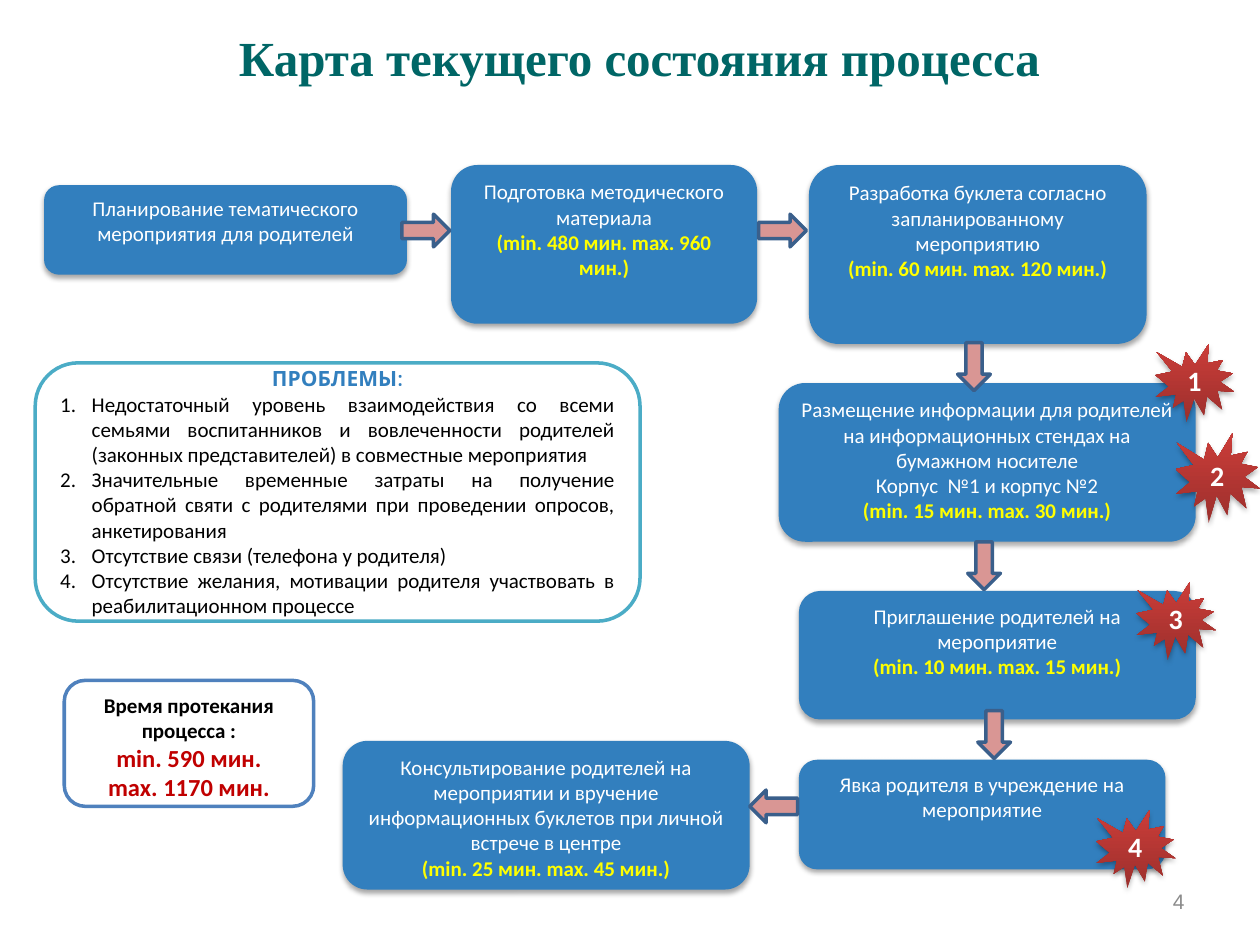
from lxml.etree import SubElement
from pptx import Presentation
from pptx.dml.color import RGBColor
from pptx.enum.shapes import MSO_SHAPE
from pptx.enum.text import MSO_ANCHOR, PP_ALIGN
from pptx.oxml.ns import qn
from pptx.util import Inches, Pt

TEAL = RGBColor(0x00, 0x66, 0x66)
BLUE = RGBColor(0x32, 0x7F, 0xBE)
FRAME_BLUE = RGBColor(0x4F, 0x81, 0xBD)
FRAME_AQUA = RGBColor(0x4B, 0xAC, 0xC6)
ARROW_PINK = RGBColor(0xD9, 0x96, 0x94)
ARROW_EDGE = RGBColor(0x3A, 0x5F, 0x8B)
STAR_DARK = RGBColor(0x9C, 0x2F, 0x2C)
STAR_LIGHT = RGBColor(0xCB, 0x3D, 0x39)
YELLOW = RGBColor(0xFF, 0xFF, 0x00)
RED = RGBColor(0xC0, 0x00, 0x00)
GRAY = RGBColor(0x8B, 0x8B, 0x8B)
WHITE = RGBColor(0xFF, 0xFF, 0xFF)
BLACK = RGBColor(0x00, 0x00, 0x00)

# (left, top, width, height), description lines, duration
STEPS = [
    ((0.35, 1.47, 2.88, 0.71), ["Планирование тематического мероприятия для родителей"], None),
    ((3.58, 1.31, 2.43, 1.26), ["Подготовка методического материала"],
     "(min. 480 мин. max. 960 мин.)"),
    ((6.42, 1.31, 2.68, 1.42), ["Разработка буклета согласно запланированному мероприятию"],
     "(min. 60 мин. max. 120 мин.)"),
    ((6.18, 3.04, 3.31, 1.26),
     ["Размещение информации для родителей на информационных стендах на бумажном носителе",
      "Корпус  №1 и корпус №2"],
     "(min. 15 мин. max. 30 мин.)"),
    ((6.34, 4.69, 3.15, 1.02), ["Приглашение родителей на мероприятие"],
     "(min. 10 мин. max. 15 мин.)"),
    ((6.34, 6.03, 2.91, 0.87), ["Явка родителя в учреждение на мероприятие"], None),
    ((2.72, 5.88, 3.23, 1.18),
     ["Консультирование родителей на мероприятии и вручение информационных буклетов "
      "при личной встрече в центре"],
     "(min. 25 мин. max. 45 мин.)"),
]

# left, top, rotation
ARROWS = [(3.19, 1.7, 0), (6.02, 1.7, 0), (7.54, 2.78, 90),
          (7.62, 4.36, 90), (7.7, 5.7, 90), (5.95, 6.27, 180)]

PROBLEM_MARKS = [(9.17, 2.73, 0.63, 0.62), (9.33, 3.44, 0.67, 0.71),
                 (9.02, 4.62, 0.63, 0.62), (8.7, 6.43, 0.63, 0.62)]

PROBLEMS = [
    "Недостаточный уровень взаимодействия со всеми семьями воспитанников и вовлеченности "
    "родителей (законных представителей) в совместные мероприятия",
    "Значительные временные затраты на получение обратной святи с родителями при проведении "
    "опросов, анкетирования",
    "Отсутствие связи (телефона у родителя)",
    "Отсутствие желания, мотивации родителя участвовать в реабилитационном процессе",
]


class ProcessMap:
    font = "Calibri"
    size = 12

    def __init__(self, slide):
        self.slide = slide

    def style(self, paragraph, color, size=None, bold=False, font=None, align=PP_ALIGN.CENTER):
        paragraph.alignment = align
        for run in paragraph.runs:
            run.font.name = font or self.font
            run.font.size = Pt(size or self.size)
            run.font.bold = bold
            run.font.color.rgb = color

    def shape(self, preset, area, fill=None, line=None):
        shape = self.slide.shapes.add_shape(preset, *map(Inches, area))
        shape.shadow.inherit = False
        if fill is not None:
            shape.fill.solid()
            shape.fill.fore_color.rgb = fill
        if line is None:
            shape.line.fill.background()
        else:
            shape.line.color.rgb = line
            shape.line.width = Pt(2)
        return shape

    def drop_shadow(self, shape):
        effects = shape._element.spPr.find(qn("a:effectLst"))
        shadow = SubElement(effects, qn("a:outerShdw"), blurRad=str(Pt(3.1)),
                            dist=str(Pt(1.8)), dir="5400000", rotWithShape="0")
        color = SubElement(shadow, qn("a:srgbClr"), val="000000")
        SubElement(color, qn("a:alpha"), val="35000")

    def panel(self, area, lines, fill, line=None, anchor=MSO_ANCHOR.TOP):
        panel = self.shape(MSO_SHAPE.ROUNDED_RECTANGLE, area, fill, line)
        panel.text_frame.vertical_anchor = anchor
        panel.text_frame.text = "\n".join(lines)
        return panel

    def title(self, text, area):
        title = self.slide.shapes.title
        title.left, title.top, title.width, title.height = map(Inches, area)
        title.text_frame.text = text
        self.style(title.text_frame.paragraphs[0], TEAL, 28, True, "Times New Roman")

    def step(self, area, description, duration):
        box = self.panel(area, description + ([duration] if duration else []), BLUE)
        self.drop_shadow(box)
        for paragraph in box.text_frame.paragraphs:
            is_duration = paragraph.text == duration
            self.style(paragraph, YELLOW if is_duration else WHITE, bold=is_duration)

    def arrow(self, left, top, rotation):
        arrow = self.shape(MSO_SHAPE.RIGHT_ARROW, (left, top, 0.38, 0.26), ARROW_PINK, ARROW_EDGE)
        arrow.rotation = rotation

    def problem_mark(self, number, area):
        star = self.shape(MSO_SHAPE.EXPLOSION1, area)
        star.fill.gradient()
        star.fill.gradient_angle = 90
        for stop, color, position in zip(star.fill.gradient_stops, (STAR_DARK, STAR_LIGHT), (0, 1)):
            stop.color.rgb = color
            stop.position = position
        self.drop_shadow(star)
        star.text_frame.vertical_anchor = MSO_ANCHOR.MIDDLE
        star.text_frame.text = str(number)
        self.style(star.text_frame.paragraphs[0], WHITE, 16, True)

    def problem_list(self, area, heading, problems):
        panel = self.panel(area, [heading, *problems], WHITE, FRAME_AQUA, MSO_ANCHOR.MIDDLE)
        first, *items = panel.text_frame.paragraphs
        self.style(first, BLUE, bold=True, font="Quicksand")
        for item in items:
            properties = item._p.get_or_add_pPr()
            properties.set("marL", str(Inches(0.25)))
            properties.set("indent", str(-Inches(0.25)))
            bullet_color = SubElement(properties, qn("a:buClr"))
            SubElement(bullet_color, qn("a:srgbClr"), val=str(BLACK))
            SubElement(properties, qn("a:buAutoNum"), type="arabicPeriod")
            self.style(item, BLACK, align=PP_ALIGN.JUSTIFY)

    def total_time(self, area, heading, durations):
        panel = self.panel(area, [heading, *durations], WHITE, FRAME_BLUE)
        first, *rest = panel.text_frame.paragraphs
        self.style(first, BLACK, bold=True)
        for paragraph in rest:
            self.style(paragraph, RED, 14, True)

    def page_number(self, number, area):
        frame = self.slide.shapes.add_textbox(*map(Inches, area)).text_frame
        frame.word_wrap = True
        frame.vertical_anchor = MSO_ANCHOR.MIDDLE
        frame.text = str(number)
        self.style(frame.paragraphs[0], GRAY, font="Arial", align=PP_ALIGN.RIGHT)


def main():
    presentation = Presentation()
    presentation.slide_width, presentation.slide_height = Inches(10), Inches(7.5)
    title_only = presentation.slide_layouts[5]
    process = ProcessMap(presentation.slides.add_slide(title_only))

    process.title("Карта текущего состояния процесса", (1.61, 0.17, 6.93, 0.56))
    for step in STEPS:
        process.step(*step)
    process.total_time((0.51, 5.4, 1.98, 1), "Время протекания процесса :",
                       ["min. 590 мин.", "max. 1170 мин."])
    process.problem_list((0.28, 2.88, 4.8, 2.05), "ПРОБЛЕМЫ:", PROBLEMS)
    for arrow in ARROWS:
        process.arrow(*arrow)
    for number, area in enumerate(PROBLEM_MARKS, start=1):
        process.problem_mark(number, area)
    process.page_number(4, (7.17, 6.95, 2.33, 0.4))
    presentation.save("out.pptx")


if __name__ == "__main__":
    main()
